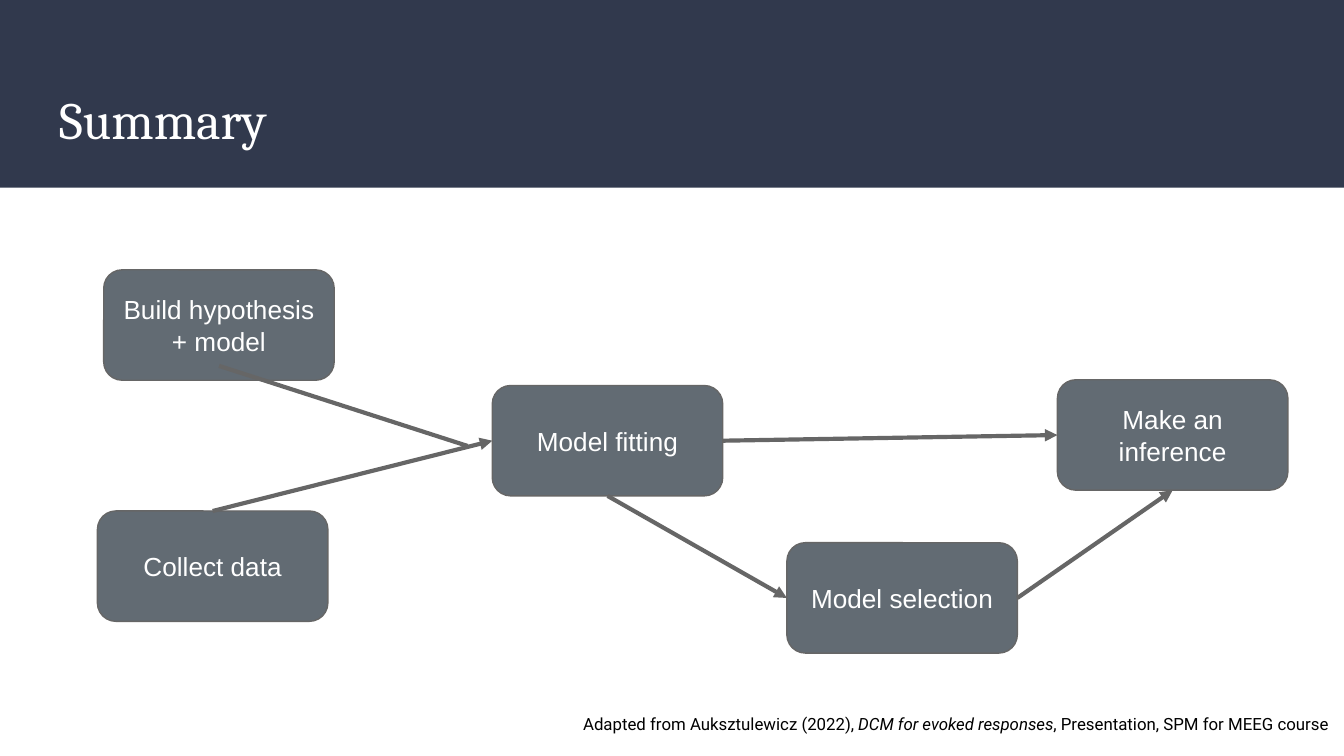
from dataclasses import dataclass
from typing import Any, Optional

import pptx
import pptx.dml.color
import pptx.enum.dml
import pptx.enum.shapes
import pptx.enum.text
import pptx.oxml
import pptx.oxml.ns
import pptx.util

SLIDE_WIDTH = pptx.util.Inches(10)
SLIDE_HEIGHT = SLIDE_WIDTH * 9 // 16
TOP, LEFT, BOTTOM, RIGHT = range(4)
ANCHOR = pptx.enum.text.MSO_ANCHOR
ALIGN = pptx.enum.text.PP_ALIGN
FIT = pptx.enum.text.MSO_AUTO_SIZE


@dataclass(frozen=True)
class Theme:
    band: str = "31394D"
    step: str = "626B73"
    line: str = "666666"
    light: str = "FFFFFF"
    dark: str = "000000"
    title_font: str = "Cambria"
    step_font: str = "Arial"
    credit_font: str = "Roboto"
    title_size: float = 28
    step_size: float = 14
    credit_size: float = 9
    outline: float = 0.75
    arrow: float = 2.25


@dataclass(frozen=True)
class Step:
    """A process box; left and top are percentages of the slide."""
    label: str
    left: float
    top: float


@dataclass(frozen=True)
class Flow:
    start: str
    start_side: int
    end: str
    end_side: int


THEME = Theme()
STEP_WIDTH, STEP_HEIGHT = 17.15, 14.6
STEPS = (
    Step("Collect data", 7.25, 67.6),
    Step("Build hypothesis + model", 7.72, 35.7),
    Step("Model fitting", 36.63, 51),
    Step("Model selection", 58.55, 71.8),
    Step("Make an inference", 78.68, 50.25),
)
FLOWS = (
    Flow("Collect data", TOP, "Model fitting", LEFT),
    Flow("Model fitting", BOTTOM, "Model selection", LEFT),
    Flow("Model selection", RIGHT, "Make an inference", BOTTOM),
    Flow("Model fitting", RIGHT, "Make an inference", LEFT),
)
MERGING_LINE = (16.3, 48.4, 34.8, 59)
CREDIT = (
    ("Adapted from Auksztulewicz (2022), ", False),
    ("DCM for evoked responses", True),
    (", Presentation, SPM for MEEG course", False),
)


def across(percent: float) -> int:
    return round(SLIDE_WIDTH * percent / 100)


def down(percent: float) -> int:
    return round(SLIDE_HEIGHT * percent / 100)


def area(left: float, top: float, width: float, height: float) -> tuple[int, int, int, int]:
    return across(left), down(top), across(width), down(height)


def rgb(color: str) -> pptx.dml.color.RGBColor:
    return pptx.dml.color.RGBColor.from_string(color)


def apply(target: Any, values: dict[str, Any]) -> None:
    for name, value in values.items():
        setattr(target, name, value)


def write(shape: Any, runs: tuple, font: str, size: float, color: str,
          align: Any = ALIGN.LEFT, anchor: Any = ANCHOR.TOP, fit: Any = FIT.NONE) -> None:
    frame = shape.text_frame
    margins = {f"margin_{side}": pptx.util.Inches(0.1)
               for side in ("left", "top", "right", "bottom")}
    apply(frame, {**margins, "word_wrap": True, "vertical_anchor": anchor,
                  "auto_size": fit})
    paragraph = frame.paragraphs[0]
    paragraph.alignment = align
    for text, italic in runs:
        run = paragraph.add_run()
        run.text = text
        apply(run.font, {"name": font, "size": pptx.util.Pt(size), "italic": italic})
        run.font.color.rgb = rgb(color)


def draw_band(slide: Any) -> None:
    band = slide.shapes.add_shape(pptx.enum.shapes.MSO_SHAPE.RECTANGLE,
                                  *area(0, 0, 100, 24.85))
    band.shadow.inherit = False
    band.fill.solid()
    band.fill.fore_color.rgb = rgb(THEME.band)
    band.line.fill.background()
    slide.shapes.title.element.addprevious(band.element)


def draw_title(slide: Any) -> None:
    title = slide.shapes.title
    apply(title, dict(zip(("left", "top", "width", "height"),
                          area(3.4, 9.8, 93.2, 12.1))))
    write(title, (("Summary", False),), THEME.title_font, THEME.title_size, THEME.light)


def draw_credit(slide: Any) -> None:
    credit = slide.shapes.add_textbox(*area(42.4, 93.1, 57.6, 6.2))
    write(credit, CREDIT, THEME.credit_font, THEME.credit_size, THEME.dark,
          fit=FIT.SHAPE_TO_FIT_TEXT)


def draw_step(slide: Any, step: Step) -> Any:
    box = slide.shapes.add_shape(pptx.enum.shapes.MSO_SHAPE.ROUNDED_RECTANGLE,
                                 *area(step.left, step.top, STEP_WIDTH, STEP_HEIGHT))
    box.shadow.inherit = False
    box.fill.solid()
    box.fill.fore_color.rgb = rgb(THEME.step)
    box.line.color.rgb = rgb(THEME.line)
    box.line.width = pptx.util.Pt(THEME.outline)
    write(box, ((step.label, False),), THEME.step_font, THEME.step_size, THEME.light,
          ALIGN.CENTER, ANCHOR.MIDDLE)
    return box


def draw_line(slide: Any, ends: tuple[float, float, float, float] = (0, 0, 0, 0),
              arrowhead: Optional[str] = None) -> Any:
    x1, y1, x2, y2 = ends
    line = slide.shapes.add_connector(pptx.enum.shapes.MSO_CONNECTOR.STRAIGHT,
                                      across(x1), down(y1), across(x2), down(y2))
    line.line.color.rgb = rgb(THEME.line)
    line.line.width = pptx.util.Pt(THEME.arrow)
    properties = line.element.spPr
    if arrowhead:
        tail = pptx.oxml.parse_xml(
            f'<a:tailEnd {pptx.oxml.ns.nsdecls("a")} type="{arrowhead}"/>')
        properties.find(pptx.oxml.ns.qn("a:ln")).append(tail)
    properties.append(
        pptx.oxml.parse_xml(f'<a:effectLst {pptx.oxml.ns.nsdecls("a")}/>'))
    return line


def draw_flow(slide: Any, flow: Flow, boxes: dict[str, Any]) -> None:
    arrow = draw_line(slide, arrowhead="triangle")
    arrow.begin_connect(boxes[flow.start], flow.start_side)
    arrow.end_connect(boxes[flow.end], flow.end_side)


def main() -> None:
    deck = pptx.Presentation()
    apply(deck, {"slide_width": SLIDE_WIDTH, "slide_height": SLIDE_HEIGHT})
    slide = deck.slides.add_slide(deck.slide_layouts.get_by_name("Title Only"))
    draw_band(slide)
    draw_title(slide)
    draw_credit(slide)
    boxes = {step.label: draw_step(slide, step) for step in STEPS}
    draw_line(slide, MERGING_LINE)
    for flow in FLOWS:
        draw_flow(slide, flow, boxes)
    deck.save("out.pptx")


if __name__ == "__main__":
    main()
